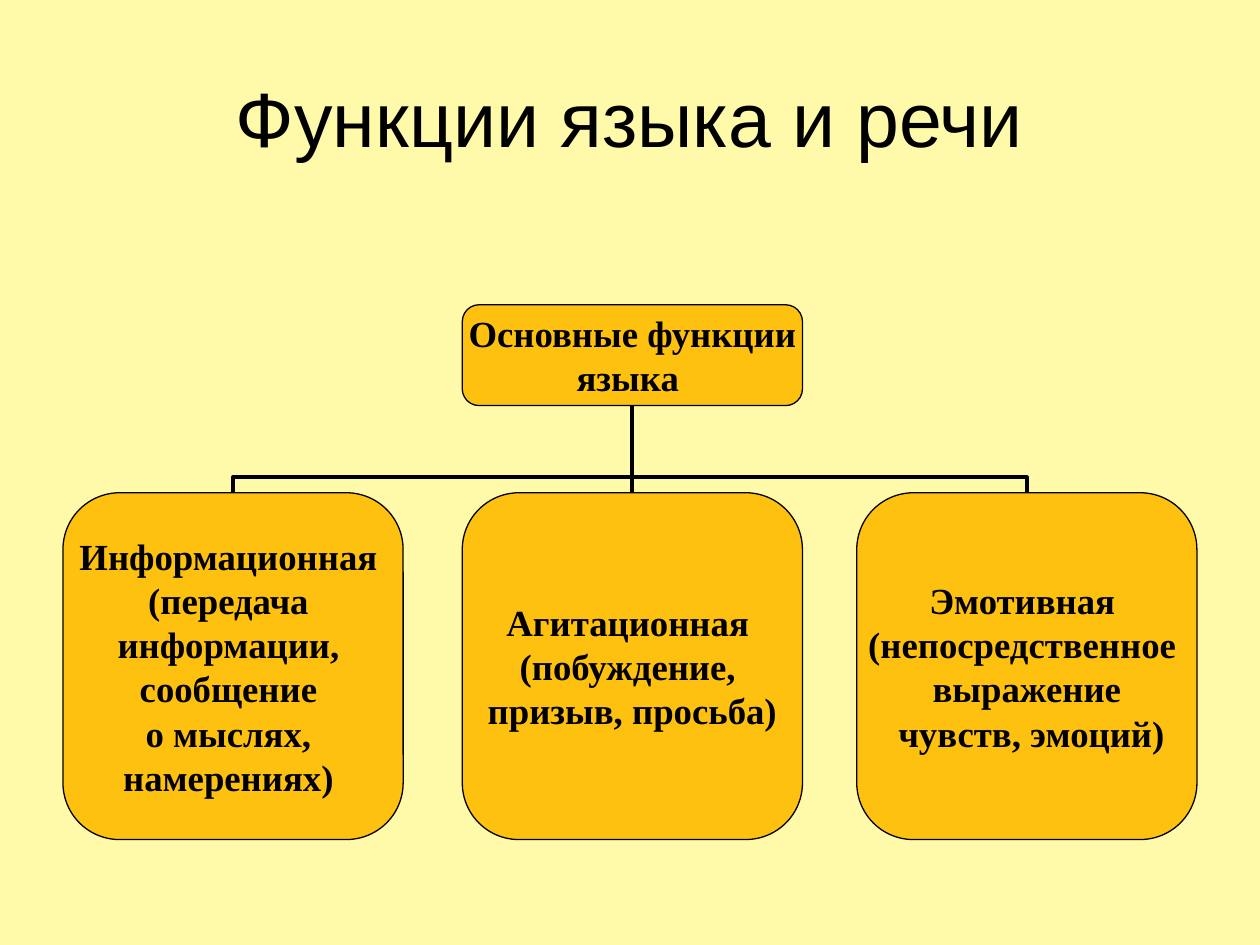
from lxml.etree import SubElement
from pptx import Presentation
from pptx.dml.color import RGBColor
from pptx.enum.shapes import MSO_CONNECTOR as LINK, MSO_SHAPE
from pptx.enum.text import MSO_ANCHOR, PP_ALIGN
from pptx.oxml.ns import qn
from pptx.util import Pt

# Content
TITLE = "Функции языка и речи"
ROOT = ["Основные функции языка "]
FUNCTIONS = [  # left edge, hanging indent, lines
    (36, 0, ["Информационная ", "(передача ", "информации, ", "сообщение ",
             "о мыслях, ", "намерениях) "]),
    (264.2, 27, ["Агитационная ", "(побуждение, ", "призыв, просьба)"]),
    (489.6, 27, ["Эмотивная ", "(непосредственное ", "выражение",
                 " чувств, эмоций)"]),
]

# Colours and formats
PAPER = RGBColor(0xFF, 0xFA, 0xA9)
GOLD = RGBColor(0xFF, 0xC1, 0x10)
BLACK = RGBColor(0, 0, 0)
TITLE_FONT = {"name": "Arial", "size": Pt(44), "bold": False}
BOX_FONT = {"name": "Times New Roman", "size": Pt(21), "bold": True}
NO_MARGINS = {f"margin_{side}": 0 for side in ("left", "top", "right", "bottom")}

# Geometry in points
BOX_WIDTH = 194.4
ROOT_TOP, ROOT_HEIGHT = 174.2, 57.6
CARD_TOP, CARD_HEIGHT = 281.6, 198.2
ROOT_LEFT = FUNCTIONS[1][0]
ROOT_CENTRE = ROOT_LEFT + BOX_WIDTH / 2
ROOT_BOTTOM = ROOT_TOP + ROOT_HEIGHT
BEND = 17900  # share of the drop below the bend, in 1/100000


def apply(target, values):
    for key, value in values.items():
        setattr(target, key, value)


def style_font(paragraph, values):
    apply(paragraph.font, values)
    paragraph.font.color.rgb = BLACK


def add_box(tree, left, top, height, lines, wrap, indent=0):
    box = tree.add_shape(MSO_SHAPE.ROUNDED_RECTANGLE,
                         Pt(left), Pt(top), Pt(BOX_WIDTH), Pt(height))
    box.shadow.inherit = False
    box.fill.solid()
    box.fill.fore_color.rgb = GOLD
    box.line.color.rgb = BLACK
    box.line.width = Pt(0.75)
    frame = box.text_frame
    apply(frame, {**NO_MARGINS, "word_wrap": wrap,
                  "vertical_anchor": MSO_ANCHOR.MIDDLE})
    for number, line in enumerate(lines):
        paragraph = frame.add_paragraph() if number else frame.paragraphs[0]
        paragraph.text = line
        paragraph.alignment = PP_ALIGN.CENTER
        if indent:
            properties = paragraph._p.get_or_add_pPr()
            properties.set("marL", str(Pt(indent)))
            properties.set("indent", str(-Pt(indent)))
        style_font(paragraph, BOX_FONT)


def add_link(tree, kind, *ends):
    link = tree.add_connector(kind, *map(Pt, ends))
    link.line.color.rgb = BLACK
    link.line.width = Pt(2.25)
    SubElement(link._element.spPr, qn("a:effectLst"))
    return link


def add_branch(tree, card_centre):
    """Elbow that leaves the card upwards: a turned horizontal elbow."""
    drop, span = CARD_TOP - ROOT_BOTTOM, abs(card_centre - ROOT_CENTRE)
    side = 1 if card_centre > ROOT_CENTRE else -1
    middle_x = (card_centre + ROOT_CENTRE) / 2
    middle_y = (CARD_TOP + ROOT_BOTTOM) / 2
    link = add_link(tree, LINK.ELBOW,
                    middle_x + side * drop / 2, middle_y - span / 2,
                    middle_x - side * drop / 2, middle_y + span / 2)
    properties = link._element.spPr
    turn = 90 if side > 0 else 270
    properties.find(qn("a:xfrm")).set("rot", str(turn * 60000))
    guides = properties.find(qn("a:prstGeom")).find(qn("a:avLst"))
    SubElement(guides, qn("a:gd"), name="adj1", fmla=f"val {BEND}")


# Slide and title
deck = Presentation()
deck.slide_width, deck.slide_height = Pt(720), Pt(540)
slide = deck.slides.add_slide(deck.slide_layouts[5])
slide.background.fill.solid()
slide.background.fill.fore_color.rgb = PAPER

title = slide.shapes.title
apply(title, {"left": Pt(36), "top": Pt(21.6), "width": Pt(648), "height": Pt(90)})
title.text_frame.text = TITLE
title.text_frame.vertical_anchor = MSO_ANCHOR.MIDDLE
heading = title.text_frame.paragraphs[0]
heading.alignment = PP_ALIGN.CENTER
style_font(heading, TITLE_FONT)

# Chart of functions: links behind, boxes in front
chart = slide.shapes.add_group_shape().shapes
for left, _, _ in FUNCTIONS:
    if left == ROOT_LEFT:
        add_link(chart, LINK.STRAIGHT, ROOT_CENTRE, CARD_TOP, ROOT_CENTRE, ROOT_BOTTOM)
    else:
        add_branch(chart, left + BOX_WIDTH / 2)
add_box(chart, ROOT_LEFT, ROOT_TOP, ROOT_HEIGHT, ROOT, wrap=True)
for left, indent, lines in FUNCTIONS:
    add_box(chart, left, CARD_TOP, CARD_HEIGHT, lines, wrap=False, indent=indent)

deck.save("out.pptx")
